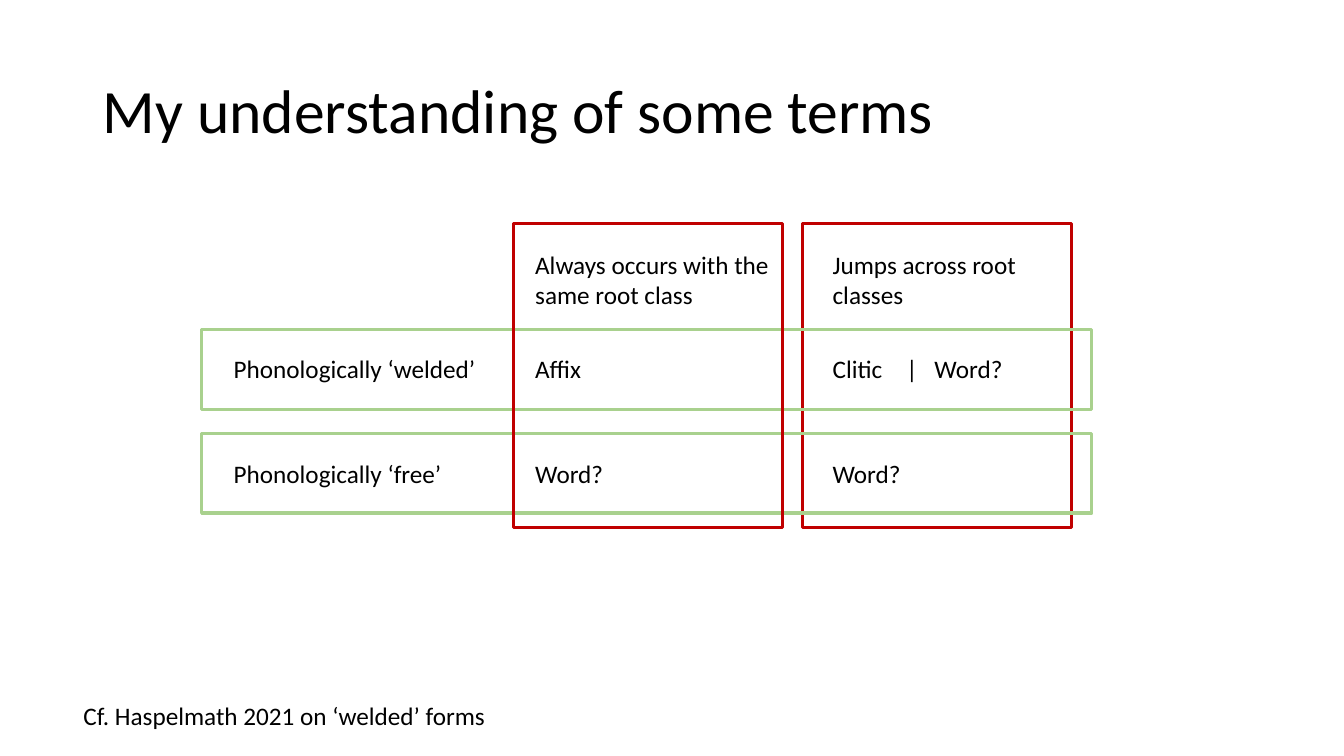
import pptx
import pptx.util
import pptx.dml.color
import pptx.enum.shapes
import pptx.enum.text
from lxml import etree

PX = 9144  # EMU per px, 100 px to the inch
BLACK, RED, GREEN = "000000", "C00000", "A9D18E"


def color(hex_string):
    return pptx.dml.color.RGBColor.from_string(hex_string)


def write(shape, text, size=18, anchor="TOP", spacing=1.0, grow=True):
    frame = shape.text_frame
    frame.word_wrap = True
    fit = pptx.enum.text.MSO_AUTO_SIZE
    frame.auto_size = fit.SHAPE_TO_FIT_TEXT if grow else fit.NONE
    frame.vertical_anchor = pptx.enum.text.MSO_ANCHOR[anchor]
    paragraph = frame.paragraphs[0]
    paragraph.line_spacing = spacing
    run = paragraph.add_run()
    run.text = text
    run.font.name = "Calibri"
    run.font.size = pptx.util.Pt(size)
    run.font.color.rgb = color(BLACK)
    return paragraph


presentation = pptx.Presentation()
presentation.slide_width = 1333 * PX
presentation.slide_height = 750 * PX
slide = presentation.slides.add_slide(presentation.slide_layouts[5])

# Title
title = slide.shapes.title
title.left, title.top, title.width, title.height = 92 * PX, 40 * PX, 1150 * PX, 145 * PX
title_paragraph = write(title, "My understanding of some terms", size=44,
                        anchor="MIDDLE", spacing=0.9, grow=False)
title_paragraph.alignment = pptx.enum.text.PP_ALIGN.LEFT

# Source note, column heads, row heads and cells
label_left, same_left, jump_left = 222, 521, 816
head_top, welded_top, free_top = 242, 346, 450
labels = [
    ("Cf. Haspelmath 2021 on ‘welded’ forms", 73, 690, 1187, 40),
    ("Always occurs with the same root class", same_left, head_top, 267, 71),
    ("Jumps across root classes", jump_left, head_top, 267, 71),
    ("Phonologically ‘welded’", label_left, welded_top, 267, 40),
    ("Affix", same_left, welded_top, 267, 40),
    ("Clitic", jump_left, welded_top, 73, 40),
    ("|\tWord?", 889, welded_top, 126, 40),
    ("Phonologically ‘free’", label_left, free_top, 267, 40),
    ("Word?", same_left, free_top, 267, 40),
    ("Word?", jump_left, free_top, 267, 40),
]
for text, left, top, width, height in labels:
    box = slide.shapes.add_textbox(left * PX, top * PX, width * PX, height * PX)
    paragraph = write(box, text)
    if "\t" in text:
        # Tab stop that sets the second term off from the bar
        properties = paragraph._p.get_or_add_pPr()
        namespace = "{%s}" % properties.nsmap["a"]
        tab_list = etree.SubElement(properties, namespace + "tabLst")
        etree.SubElement(tab_list, namespace + "tab", pos=str(28 * PX), algn="l")

# Frames: red around columns, green around rows
frames = [
    (796, 222, 267, 301, RED),
    (200, 430, 883, 79, GREEN),
    (200, 327, 883, 79, GREEN),
    (509, 222, 267, 301, RED),
]
for left, top, width, height, line_color in frames:
    frame = slide.shapes.add_shape(pptx.enum.shapes.MSO_SHAPE.RECTANGLE,
                                   left * PX, top * PX, width * PX, height * PX)
    frame.shadow.inherit = False
    frame.fill.background()
    frame.line.color.rgb = color(line_color)
    frame.line.width = pptx.util.Pt(2.25)

presentation.save("out.pptx")
